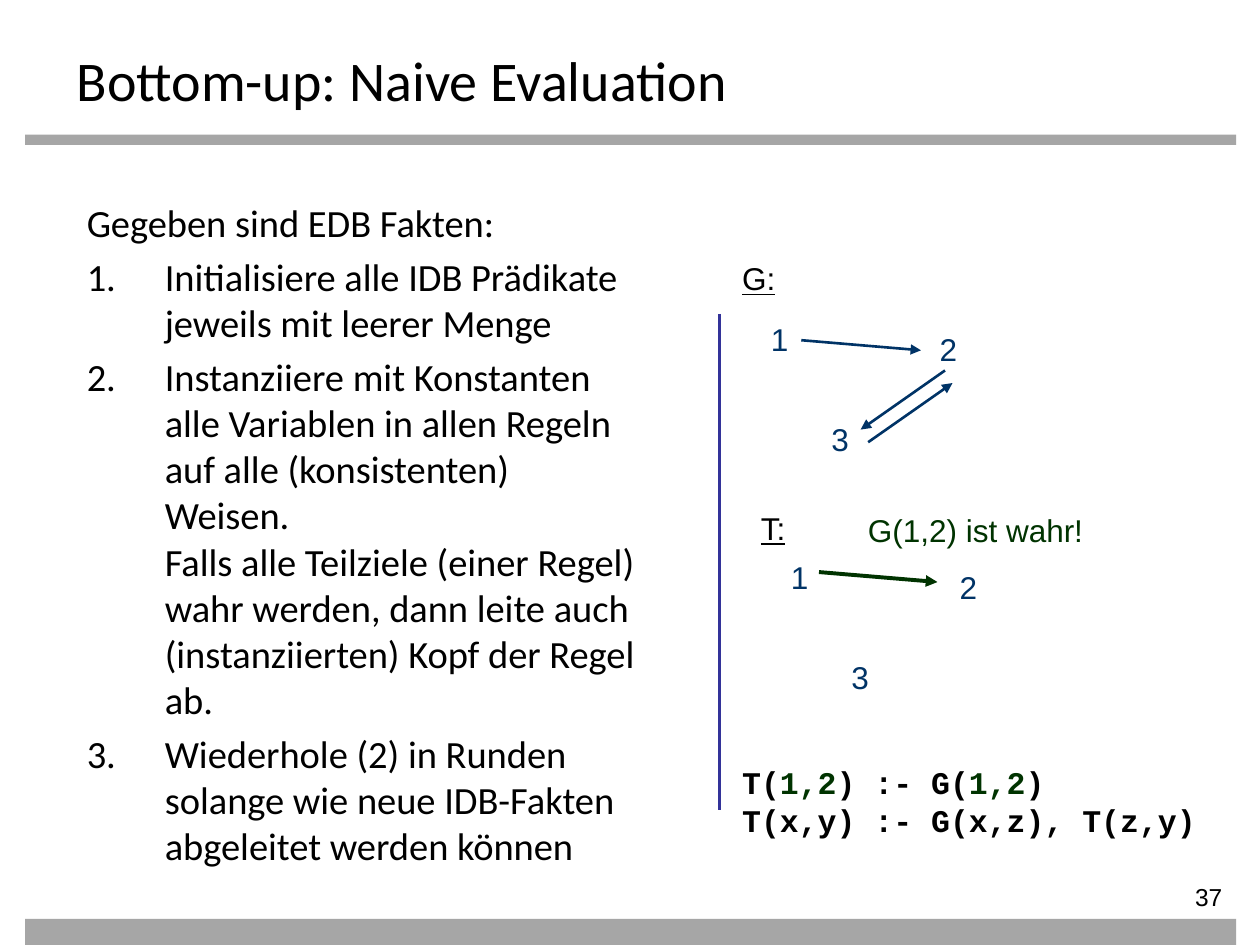
from lxml import etree
from pptx import Presentation
from pptx.dml.color import RGBColor
from pptx.enum.shapes import MSO_CONNECTOR, MSO_SHAPE
from pptx.enum.text import MSO_ANCHOR, MSO_AUTO_SIZE, PP_ALIGN
from pptx.oxml.ns import qn
from pptx.util import Pt

STRAIGHT = MSO_CONNECTOR.STRAIGHT
RECTANGLE = MSO_SHAPE.RECTANGLE
TOP = MSO_ANCHOR.TOP
FIT_SHAPE, NO_FIT = MSO_AUTO_SIZE.SHAPE_TO_FIT_TEXT, MSO_AUTO_SIZE.NONE
LEFT, RIGHT = PP_ALIGN.LEFT, PP_ALIGN.RIGHT

COLORS = {"text": "000000", "bar": "A6A6A6", "divider": "333399",
          "graph": "003366", "derived": "003300"}

TITLE = "Bottom-up: Naive Evaluation"
PAGE_NUMBER = "37"
INTRO = "Gegeben sind EDB Fakten:"
STEPS = [
    "Initialisiere alle IDB Prädikate jeweils mit leerer Menge",
    "Instanziiere mit Konstanten alle Variablen in allen Regeln auf alle "
    "(konsistenten) Weisen.\nFalls alle Teilziele (einer Regel) wahr werden, "
    "dann leite auch (instanziierten) Kopf der Regel ab.",
    "Wiederhole (2) in Runden solange wie neue IDB-Fakten abgeleitet werden können",
]
RULES = [
    [("T(", "text"), ("1,2", "derived"), (") :- G(", "text"),
     ("1,2", "derived"), (")", "text")],
    [("T(x,y) :- G(x,z), T(z,y)", "text")],
]
BARS = [(14.4, 77, 692, 5.8), (14.4, 525, 692, 15)]
HEADINGS = [("G:", (417, 144.7, 34, 29)), ("T:", (427.7, 287.3, 30, 29))]
NODES = [("1", 433.4, 179.3), ("2", 529.9, 185), ("3", 468, 236.2)]
NODE_SIZE = (24.5, 29)
T_OFFSET = (11.4, 136.1)
G_EDGES = [((457.9, 194.4), (526.3, 200.2)),
           ((540, 211.7), (491.8, 245.5)),
           ((496.1, 252.7), (544.3, 218.9))]
T_EDGE = ((468, 326.9), (535.7, 332.6))
DIVIDER = ((411.1, 179.3), (411.1, 463))
NUMBER_INDENT = 44.6


def rgb(name):
    return RGBColor.from_string(COLORS[name])


def add_text(shapes, paragraphs, box, size=18, font="Arial", color="text",
             bold=False, underline=False, align=LEFT, wrap=False,
             insets=(7.2, 3.6, 7.2, 3.6), space_before=0, numbered_from=None,
             indent=0):
    """Paragraphs are strings, or lists of (text, colour name) runs."""
    frame = shapes.add_textbox(*map(Pt, box)).text_frame
    frame.word_wrap = wrap
    frame.auto_size = NO_FIT if wrap else FIT_SHAPE
    frame.vertical_anchor = TOP
    (frame.margin_left, frame.margin_top,
     frame.margin_right, frame.margin_bottom) = map(Pt, insets)
    for index, content in enumerate(paragraphs):
        paragraph = frame.paragraphs[0] if index == 0 else frame.add_paragraph()
        paragraph.alignment = align
        if indent:
            properties = paragraph._p.get_or_add_pPr()
            properties.set("marL", str(Pt(indent)))
            properties.set("indent", str(-Pt(indent)))
            if numbered_from is not None and index >= numbered_from:
                etree.SubElement(properties, qn("a:buAutoNum"), type="arabicPeriod")
        if index:
            paragraph.space_before = Pt(space_before)
        runs = [(content, color)] if isinstance(content, str) else content
        for text, run_color in runs:
            for line_index, line in enumerate(text.split("\n")):
                if line_index:
                    paragraph.add_line_break()
                run = paragraph.add_run()
                run.text = line
                run.font.name = font
                run.font.size = Pt(size)
                run.font.bold = bold
                run.font.underline = underline
                run.font.color.rgb = rgb(run_color)


def add_line(shapes, start, end, color, width=1.5, arrow=True):
    line = shapes.add_connector(STRAIGHT, *map(Pt, start + end))
    line.line.color.rgb = rgb(color)
    line.line.width = Pt(width)
    if arrow:
        etree.SubElement(line.line._get_or_add_ln(), qn("a:tailEnd"), type="triangle")
    etree.SubElement(line._element.spPr, qn("a:effectLst"))


def add_nodes(shapes, offset=(0, 0)):
    for label, left, top in NODES:
        add_text(shapes, [label], (left + offset[0], top + offset[1], *NODE_SIZE),
                 color="graph")


def main():
    presentation = Presentation()
    presentation.slide_width, presentation.slide_height = Pt(720), Pt(540)
    blank = presentation.slide_layouts[6]
    shapes = presentation.slides.add_slide(blank).shapes

    for box in BARS:
        bar = shapes.add_shape(RECTANGLE, *map(Pt, box))
        bar.shadow.inherit = False
        bar.fill.solid()
        bar.fill.fore_color.rgb = rgb("bar")
        bar.line.fill.background()

    add_text(shapes, [PAGE_NUMBER], (626.4, 504, 79.2, 15.8), size=14,
             align=RIGHT, wrap=True, insets=(0, 0, 7.2, 0))
    add_text(shapes, [TITLE], (36.7, 20.2, 648, 39.6), size=32, font="Calibri",
             wrap=True, insets=(7.2, 5.6, 7.2, 3.6))
    add_text(shapes, [INTRO] + STEPS, (42.5, 110.2, 330.5, 324), size=22,
             font="Calibri", wrap=True, space_before=4.4, numbered_from=1,
             indent=NUMBER_INDENT)

    add_line(shapes, *DIVIDER, "divider", arrow=False)
    for heading, box in HEADINGS:
        add_text(shapes, [heading], box, underline=True)

    graph = shapes.add_group_shape().shapes
    add_nodes(graph)
    for start, end in G_EDGES:
        add_line(graph, start, end, "graph")

    add_nodes(shapes, T_OFFSET)
    add_line(shapes, *T_EDGE, "derived", width=2.25)
    add_text(shapes, ["G(1,2) ist wahr!"], (488.9, 288.7, 139, 29), color="derived")
    add_text(shapes, RULES, (417, 432.7, 273.6, 50.4), font="Courier New", bold=True)

    presentation.save("out.pptx")


if __name__ == "__main__":
    main()
